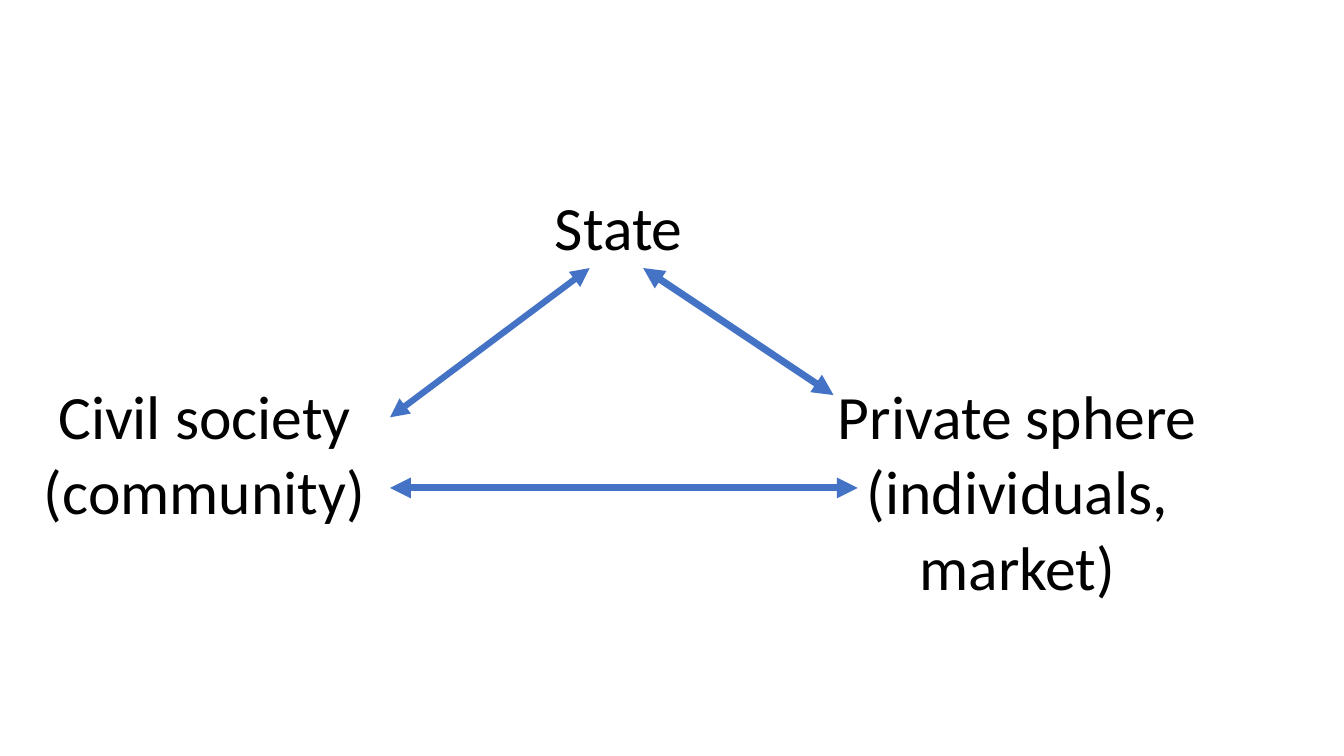
from typing import NamedTuple

from lxml.etree import SubElement
from pptx import Presentation
from pptx.dml.color import RGBColor
from pptx.enum.shapes import MSO_CONNECTOR
from pptx.enum.text import PP_ALIGN
from pptx.oxml.ns import qn
from pptx.slide import Slide
from pptx.util import Pt

COLORS = {"text": "000000", "arrow": "4472C4"}
FONT = "Calibri"
TABLE_LEFT, TABLE_TOP = 18, 133.2
COLUMN_WIDTHS = [256.3, 82.8, 169.9, 60.5, 278.6]
ROW_HEIGHTS = [67.7, 67.7, 126.7, 67.7, 67.7]


class Actor(NamedTuple):
    row: int
    column: int
    lines: list[str]


class Arrow(NamedTuple):
    start: tuple[float, float]
    end: tuple[float, float]
    width: float


ACTORS = [
    Actor(0, 2, ["State"]),
    Actor(2, 0, ["Civil society (community)"]),
    Actor(2, 4, ["Private sphere", "(individuals, market)"]),
]
ARROWS = [
    Arrow((421.2, 191.5), (278.6, 298.1), 4.5),
    Arrow((278.6, 348.5), (612.7, 348.5), 5),
    Arrow((459.4, 191.5), (595.4, 282.2), 5),
]


def add_actor_table(page: Slide, actors: list[Actor]) -> None:
    """Place the actors in an unfilled grid."""
    table = page.shapes.add_table(
        len(ROW_HEIGHTS), len(COLUMN_WIDTHS), Pt(TABLE_LEFT), Pt(TABLE_TOP),
        Pt(sum(COLUMN_WIDTHS)), Pt(sum(ROW_HEIGHTS))).table
    table.first_row = False
    table.horz_banding = False
    for column, width in zip(table.columns, COLUMN_WIDTHS):
        column.width = Pt(width)
    for row, height in zip(table.rows, ROW_HEIGHTS):
        row.height = Pt(height)
    for cell in table.iter_cells():
        cell.fill.background()
    for actor in actors:
        frame = table.cell(actor.row, actor.column).text_frame
        frame.text = "\n".join(actor.lines)
        for para in frame.paragraphs:
            para.alignment = PP_ALIGN.CENTER
            para.font.name = FONT
            para.font.size = Pt(44)
            para.font.color.rgb = RGBColor.from_string(COLORS["text"])


def add_double_arrow(page: Slide, arrow: Arrow) -> None:
    connector = page.shapes.add_connector(
        MSO_CONNECTOR.STRAIGHT, *map(Pt, arrow.start + arrow.end))
    connector.line.color.rgb = RGBColor.from_string(COLORS["arrow"])
    connector.line.width = Pt(arrow.width)
    properties = connector.element.spPr
    outline = properties.find(qn("a:ln"))
    for tip in ("a:headEnd", "a:tailEnd"):
        SubElement(outline, qn(tip), type="triangle")
    SubElement(properties, qn("a:effectLst"))


def main() -> None:
    deck = Presentation()
    deck.slide_width, deck.slide_height = Pt(960), Pt(540)
    page = deck.slides.add_slide(deck.slide_layouts[6])
    add_actor_table(page, ACTORS)
    for arrow in ARROWS:
        add_double_arrow(page, arrow)
    deck.save("out.pptx")


if __name__ == "__main__":
    main()
